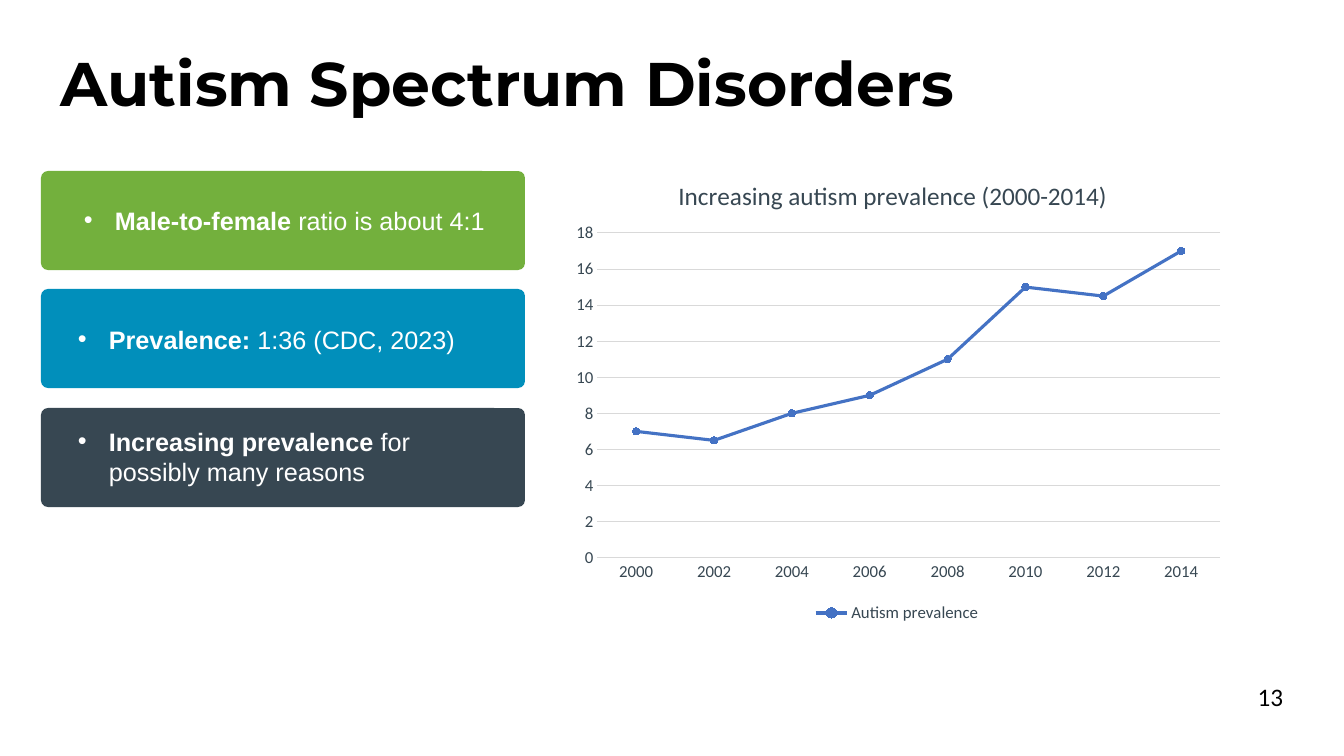
"""Build the autism spectrum disorders slide with its prevalence chart."""
from lxml.etree import SubElement
from pptx import Presentation
from pptx.chart.data import CategoryChartData as Data
from pptx.dml.color import RGBColor as RGB
from pptx.enum.chart import XL_CHART_TYPE as Kind, XL_LEGEND_POSITION as Side
from pptx.enum.chart import XL_MARKER_STYLE as Mark, XL_TICK_MARK as Tick
from pptx.enum.shapes import MSO_SHAPE as Form
from pptx.enum.text import MSO_ANCHOR as Anchor, PP_ALIGN as Align
from pptx.oxml import parse_xml
from pptx.oxml.ns import nsdecls, qn
from pptx.util import Emu, Pt

SLATE, BLUE, GRID = "374752", "4472C4", "D9D9D9"
CHART = (561, 150, 672, 477)
FACTS = [
    ("73B03D", (74, 200, 425, 40), "Male-to-female", " ratio is about 4:1"),
    ("018FBB", (68, 319, 401, 40), "Prevalence: ", "1:36 (CDC, 2023)"),
    (SLATE, (68, 421, 444, 74), "Increasing prevalence ",
     "for possibly many reasons"),
]
RATES = {"2000": 7, "2002": 6.5, "2004": 8, "2006": 9,
         "2008": 11, "2010": 15, "2012": 14.5, "2014": 17}


def px(*nums):
    """Turn pixel lengths into EMU."""
    return [Emu(round(n * 914400 / 100.8)) for n in nums]


def paint(fill, tone):
    """Fill with one solid hex colour."""
    fill.solid()
    fill.fore_color.rgb = RGB.from_string(tone)


def style(font, size, tone, face="Calibri", bold=False):
    """Set size, colour, face and weight of a font."""
    font.size, font.name, font.bold = Pt(size), face, bold
    paint(font.fill, tone)


def text(slide, box, runs, size, tone, face, wrap=True):
    """Add a text box of (words, bold) runs and return its frame and paragraph."""
    frame = slide.shapes.add_textbox(*px(*box)).text_frame
    frame.word_wrap = wrap
    para = frame.paragraphs[0]
    for words, bold in runs:
        run = para.add_run()
        run.text = words
        style(run.font, size, tone, face, bold)
    return frame, para


def bullet(para):
    """Give a paragraph a hanging round bullet."""
    props = para._p.get_or_add_pPr()
    gap = px(31)[0]
    props.set("marL", str(gap))
    props.set("indent", str(-gap))
    SubElement(props, qn("a:buFont"), typeface="Arial")
    SubElement(props, qn("a:buChar"), char="•")


def card(slide, top, tone):
    """Add a rounded colour card."""
    shape = slide.shapes.add_shape(Form.ROUNDED_RECTANGLE, *px(41, top, 484, 99))
    shape.adjustments[0] = 0.07
    shape.shadow.inherit = False
    paint(shape.fill, tone)
    shape.line.fill.background()


def place(node, left, top, size=None):
    """Pin a chart part at slide pixels."""
    spots = {"x": (left - CHART[0]) / CHART[2], "y": (top - CHART[1]) / CHART[3]}
    if size:
        spots.update(w=size[0] / CHART[2], h=size[1] / CHART[3])
    old = node.find(qn("c:layout"))
    if old is None:
        old = parse_xml(f"<c:layout {nsdecls('c')}/>")
        node.insert(0, old)
    man = SubElement(old, qn("c:manualLayout"))
    if size:
        SubElement(man, qn("c:layoutTarget"), val="inner")
    for key in "xy":
        SubElement(man, qn(f"c:{key}Mode"), val="edge")
    for key, part in spots.items():
        SubElement(man, qn(f"c:{key}"), val=f"{part:.3f}")


def rule(line, tone, width):
    """Set colour and width of a line."""
    paint(line.fill, tone)
    line.width = Pt(width)


def graph(slide):
    """Add the prevalence line chart."""
    data = Data()
    data.categories = list(RATES)
    data.add_series("Autism prevalence", list(RATES.values()))
    chart = slide.shapes.add_chart(Kind.LINE_MARKERS, *px(*CHART), data).chart
    style(chart.font, 12, SLATE)
    chart.has_title = True
    run = chart.chart_title.text_frame.paragraphs[0].add_run()
    run.text = "Increasing autism prevalence (2000-2014)"
    style(run.font, 18, SLATE)
    place(chart.chart_title._element, 674, 174)
    place(chart._chartSpace.chart.plotArea, 597, 233, (623, 325))
    chart.has_legend = True
    chart.legend.position = Side.BOTTOM
    chart.legend.include_in_layout = False
    style(chart.legend.font, 12, SLATE)
    years, rates = chart.category_axis, chart.value_axis
    for axis in (years, rates):
        axis.major_tick_mark = axis.minor_tick_mark = Tick.NONE
        style(axis.tick_labels.font, 12, SLATE)
    rule(years.format.line, GRID, 0.75)
    rates.format.line.fill.background()
    rates.minimum_scale, rates.maximum_scale, rates.major_unit = 0, 18, 2
    rates.has_major_gridlines = True
    rule(rates.major_gridlines.format.line, GRID, 0.75)
    plot = chart.plots[0]
    plot.vary_by_categories = False
    line = plot.series[0]
    line.smooth = False
    rule(line.format.line, BLUE, 2.25)
    line.marker.style, line.marker.size = Mark.CIRCLE, 5
    paint(line.marker.format.fill, BLUE)
    rule(line.marker.format.line, BLUE, 0.75)


def main():
    """Build and save the slide."""
    deck = Presentation()
    deck.slide_width, deck.slide_height = px(1344, 756)
    slide = deck.slides.add_slide(deck.slide_layouts[6])
    frame, para = text(slide, (51, 41, 1227, 91),
                       [("Autism Spectrum Disorders", True)],
                       44, "000000", "Montserrat")
    frame.vertical_anchor = Anchor.MIDDLE
    para.line_spacing = 0.9
    for i, (tone, box, lead, rest) in enumerate(FACTS):
        card(slide, 171 + 237 * i // 2, tone)
        para = text(slide, box, [(lead, True), (rest, False)],
                    18, "FFFFFF", "Arial", tone == SLATE)[1]
        bullet(para)
    graph(slide)
    para = text(slide, (991, 676, 302, 40), [("13", False)],
                18, "000000", "Calibri")[1]
    para.alignment = Align.RIGHT
    deck.save("out.pptx")


if __name__ == "__main__":
    main()
